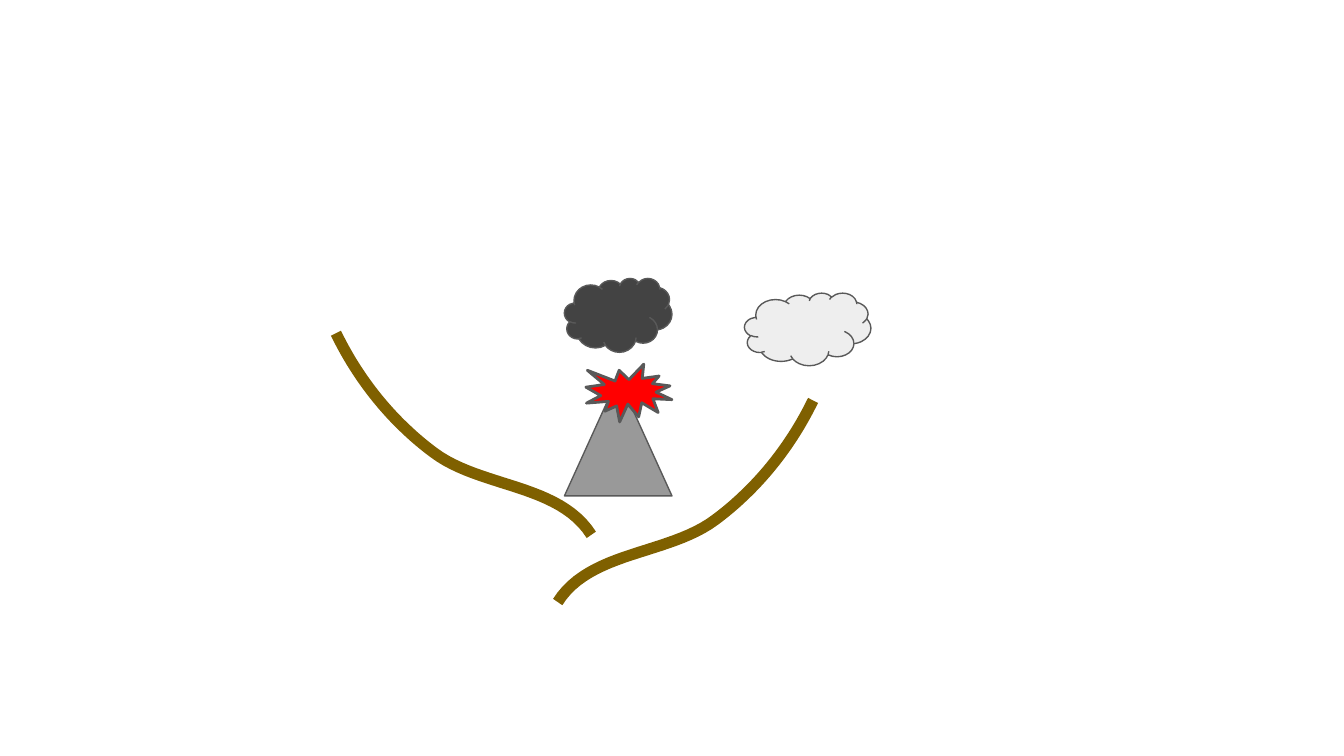
import dataclasses

import pptx
import pptx.dml.color
import pptx.enum.shapes
import pptx.util

Inches = pptx.util.Inches
SHAPE = pptx.enum.shapes.MSO_SHAPE


@dataclasses.dataclass(frozen=True)
class Theme:
    outline: str = "595959"
    ground: str = "7F6000"
    rock: str = "999999"
    smoke: str = "434343"
    steam: str = "EEEEEE"
    fire: str = "FF0000"
    thin: float = 0.75
    medium: float = 1.5
    thick: float = 6


class Scene:
    """Holds the theme and the current slide."""

    def __init__(self, s, theme):
        self.s = s
        self.theme = theme

    def style(self, sp, fill, line, width):
        sp.shadow.inherit = False
        if fill:
            sp.fill.solid()
        else:
            sp.fill.background()
        formats = {
            sp.line: {"width": pptx.util.Pt(width)},
            sp.line.color: {"rgb": pptx.dml.color.RGBColor.from_string(line)},
        }
        if fill:
            formats[sp.fill.fore_color] = {
                "rgb": pptx.dml.color.RGBColor.from_string(fill)}
        for target, values in formats.items():
            for name, value in values.items():
                setattr(target, name, value)

    def shape(self, kind, box, fill, width):
        sp = self.s.shapes.add_shape(kind, *map(Inches, box))
        self.style(sp, fill, self.theme.outline, width)

    def curve(self, points, steps=24):
        """Draw joined cubic curves: a start, then three points for each."""
        track = [points[0]]
        for i in range(0, len(points) - 1, 3):
            for k in range(1, steps + 1):
                t = k / steps
                u = 1 - t
                weights = (u**3, 3 * u * u * t, 3 * u * t * t, t**3)
                track.append(tuple(
                    sum(w * p[axis] for w, p in zip(weights, points[i:i + 4]))
                    for axis in (0, 1)))
        track = [(Inches(x), Inches(y)) for x, y in track]
        builder = self.s.shapes.build_freeform(*track[0], scale=1.0)
        builder.add_line_segments(track[1:], close=False)
        self.style(builder.convert_to_shape(), None,
                   self.theme.ground, self.theme.thick)


def main():
    # A 16:9 slide
    prs = pptx.Presentation()
    prs.slide_width, prs.slide_height = Inches(10), Inches(10 * 9 / 16)
    s = prs.slides.add_slide(prs.slide_layouts[6])
    theme = Theme()
    scene = Scene(s, theme)

    # Ground: the left slope mirrors the right one, half an inch higher
    right_slope = [(4.15, 4.48), (4.39, 4.1), (4.97, 4.13), (5.32, 3.87),
                   (5.63, 3.64), (5.88, 3.33), (6.05, 2.98)]
    left_slope = [(8.55 - x, y - 0.5) for x, y in right_slope]
    scene.curve(right_slope)
    scene.curve(left_slope)

    # Volcano, its smoke, a cloud of steam and the eruption
    for kind, box, fill, width in (
        (SHAPE.ISOSCELES_TRIANGLE, (4.2, 2.81, 0.8, 0.88), theme.rock, theme.thin),
        (SHAPE.CLOUD, (4.2, 2.07, 0.8, 0.55), theme.smoke, theme.thin),
        (SHAPE.CLOUD, (5.54, 2.18, 0.94, 0.54), theme.steam, theme.thin),
        (SHAPE.EXPLOSION1, (4.36, 2.71, 0.64, 0.43), theme.fire, theme.medium),
    ):
        scene.shape(kind, box, fill, width)

    prs.save("out.pptx")


if __name__ == "__main__":
    main()
